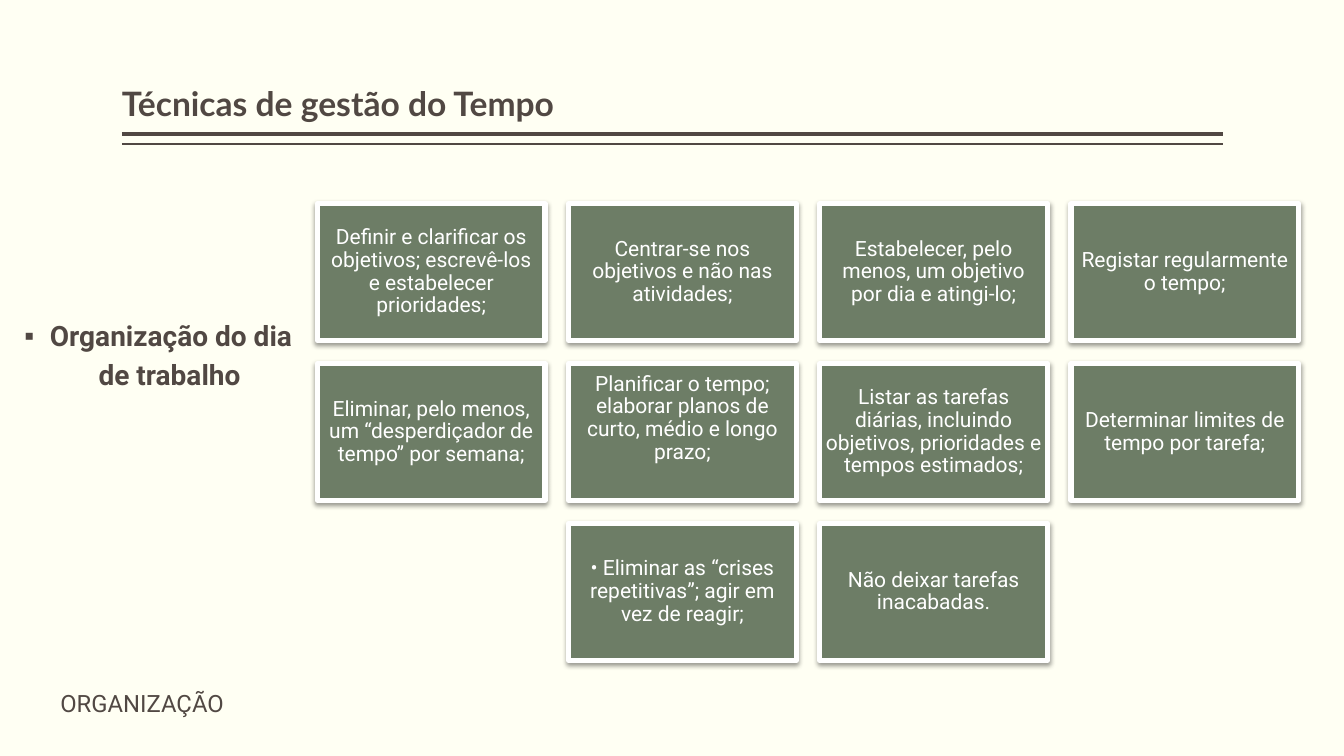
from lxml import etree
from pptx import Presentation
from pptx.dml.color import RGBColor
from pptx.enum.shapes import MSO_CONNECTOR, MSO_SHAPE
from pptx.enum.text import MSO_ANCHOR, MSO_AUTO_SIZE, PP_ALIGN
from pptx.oxml import parse_xml
from pptx.oxml.ns import nsdecls, qn
from pptx.util import Cm, Pt

TITLE = "Técnicas de gestão do Tempo"
TOPIC = ["Organização do dia ", "de trabalho"]
SECTION = "ORGANIZAÇÃO"
LIFTED = "Planificar o tempo; elaborar planos de curto, médio e longo prazo;"
ROWS = [
    ["Definir e clarificar os objetivos; escrevê-los e estabelecer prioridades;",
     "Centrar-se nos objetivos e não nas atividades;",
     "Estabelecer, pelo menos, um objetivo por dia e atingi-lo;",
     "Registar regularmente o tempo;"],
    ["Eliminar, pelo menos, um “desperdiçador de tempo” por semana;",
     LIFTED,
     "Listar as tarefas diárias, incluindo objetivos, prioridades e tempos estimados;",
     "Determinar limites de tempo por tarefa;"],
    ["• Eliminar as “crises repetitivas”; agir em vez de reagir;",
     "Não deixar tarefas inacabadas."],
]
RULES = [(3.38, 3), (3.63, 1)]
INK, CREAM, GREEN, WHITE = "514843", "FFFFF3", "6D7D66", "FFFFFF"
COLUMNS = 4
GRID_LEFT, GRID_TOP = 8.0, 5.13
CARD_W, CARD_H = 5.74, 3.45
STEP_X, STEP_Y = 6.33, 4.03


def rgb(value):
    return RGBColor.from_string(value)


def place(sp, left, top, width, height):
    sp.left, sp.top, sp.width, sp.height = Cm(left), Cm(top), Cm(width), Cm(height)


def set_frame(tf, anchor, side=0, top=0.13, bottom=0.13):
    tf.word_wrap = True
    tf.auto_size = MSO_AUTO_SIZE.NONE
    tf.vertical_anchor = anchor
    tf.margin_left = tf.margin_right = Cm(side)
    tf.margin_top, tf.margin_bottom = Cm(top), Cm(bottom)


def style(p, font, size, color, bold=False, align=PP_ALIGN.LEFT, spacing=0.9, after=0):
    p.font.name, p.font.size, p.font.bold = font, Pt(size), bold
    p.font.color.rgb = rgb(color)
    p.alignment, p.line_spacing = align, spacing
    p.space_before, p.space_after = Pt(0), Pt(after)


def set_bullet(p, char=None):
    pPr = p._p.get_or_add_pPr()
    pPr.set("marL", "0")
    pPr.set("indent", str(-Cm(0.64) if char else 0))
    tag = f'<a:buChar {nsdecls("a")} char="{char}"/>' if char else f'<a:buNone {nsdecls("a")}/>'
    pPr.insert_element_before(parse_xml(tag), "a:tabLst", "a:defRPr", "a:extLst")


def add_rule(s, y, weight):
    line = s.shapes.add_connector(MSO_CONNECTOR.STRAIGHT, Cm(3.07), Cm(y), Cm(30.81), Cm(y))
    line.line.color.rgb = rgb(INK)
    line.line.width = Pt(weight)
    etree.SubElement(line._element.spPr, qn("a:effectLst"))


def add_card(s, text, left, top):
    sp = s.shapes.add_shape(MSO_SHAPE.RECTANGLE, Cm(left), Cm(top), Cm(CARD_W), Cm(CARD_H))
    sp.fill.solid()
    sp.fill.fore_color.rgb = rgb(GREEN)
    sp.line.color.rgb = rgb(WHITE)
    sp.line.width = Pt(3.82)
    sp.shadow.inherit = False
    effects = sp._element.spPr.find(qn("a:effectLst"))
    effects.append(parse_xml(
        f'<a:outerShdw {nsdecls("a")} blurRad="{Pt(3.5)}" dist="{Pt(2)}" dir="5400000" '
        'rotWithShape="0"><a:srgbClr val="000000"><a:alpha val="38000"/></a:srgbClr>'
        '</a:outerShdw>'))
    tf = sp.text_frame
    set_frame(tf, MSO_ANCHOR.MIDDLE, 0.15, 0.15, 0.83 if text == LIFTED else 0.15)
    tf.text = text
    style(tf.paragraphs[0], "Roboto", 15, WHITE, align=PP_ALIGN.CENTER)


def main():
    prs = Presentation()
    prs.slide_width, prs.slide_height = Cm(33.87), Cm(19.05)
    s = prs.slides.add_slide(prs.slide_layouts[1])
    s.background.fill.solid()
    s.background.fill.fore_color.rgb = rgb(CREAM)

    for y, weight in RULES:
        add_rule(s, y, weight)

    title, body = s.placeholders
    place(title, 3.07, 0.2, 27.74, 3.05)
    set_frame(title.text_frame, MSO_ANCHOR.BOTTOM)
    title.text_frame.text = TITLE
    style(title.text_frame.paragraphs[0], "Lato", 24, INK, bold=True, after=6)

    place(body, 0.53, 7.04, 7.49, 5.77)
    set_frame(body.text_frame, MSO_ANCHOR.TOP, top=1.08)
    body.text_frame.text = "\n".join(TOPIC)
    for p, char in zip(body.text_frame.paragraphs, ["▪", None]):
        style(p, "Roboto", 20, INK, bold=True, align=PP_ALIGN.CENTER, after=6)
        set_bullet(p, char)

    for row, texts in enumerate(ROWS):
        offset = (COLUMNS - len(texts)) / 2
        for col, text in enumerate(texts):
            add_card(s, text, GRID_LEFT + (col + offset) * STEP_X, GRID_TOP + row * STEP_Y)

    section = s.shapes.add_textbox(Cm(1.52), Cm(17.37), Cm(4.3), Cm(0.86))
    set_frame(section.text_frame, MSO_ANCHOR.TOP)
    section.text_frame.text = SECTION
    style(section.text_frame.paragraphs[0], "Roboto", 17, INK, spacing=0.8)

    prs.save("out.pptx")


if __name__ == "__main__":
    main()
